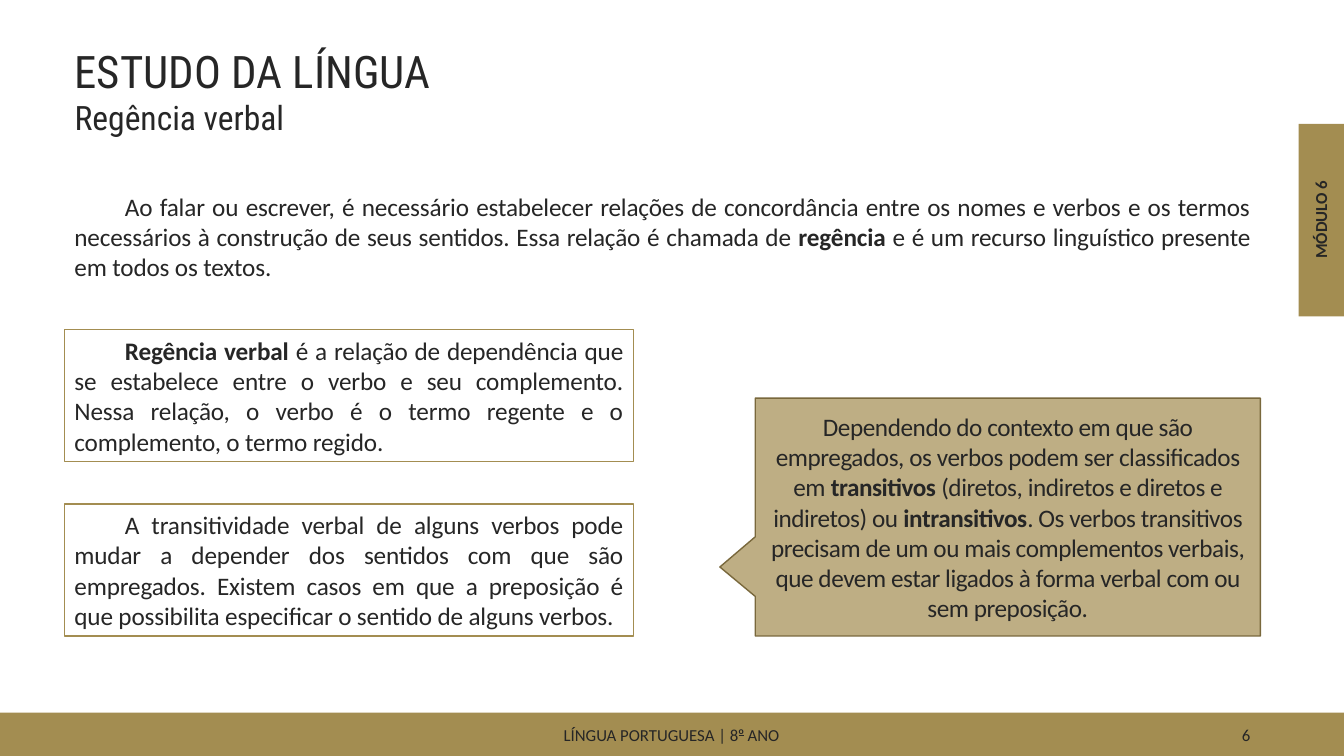
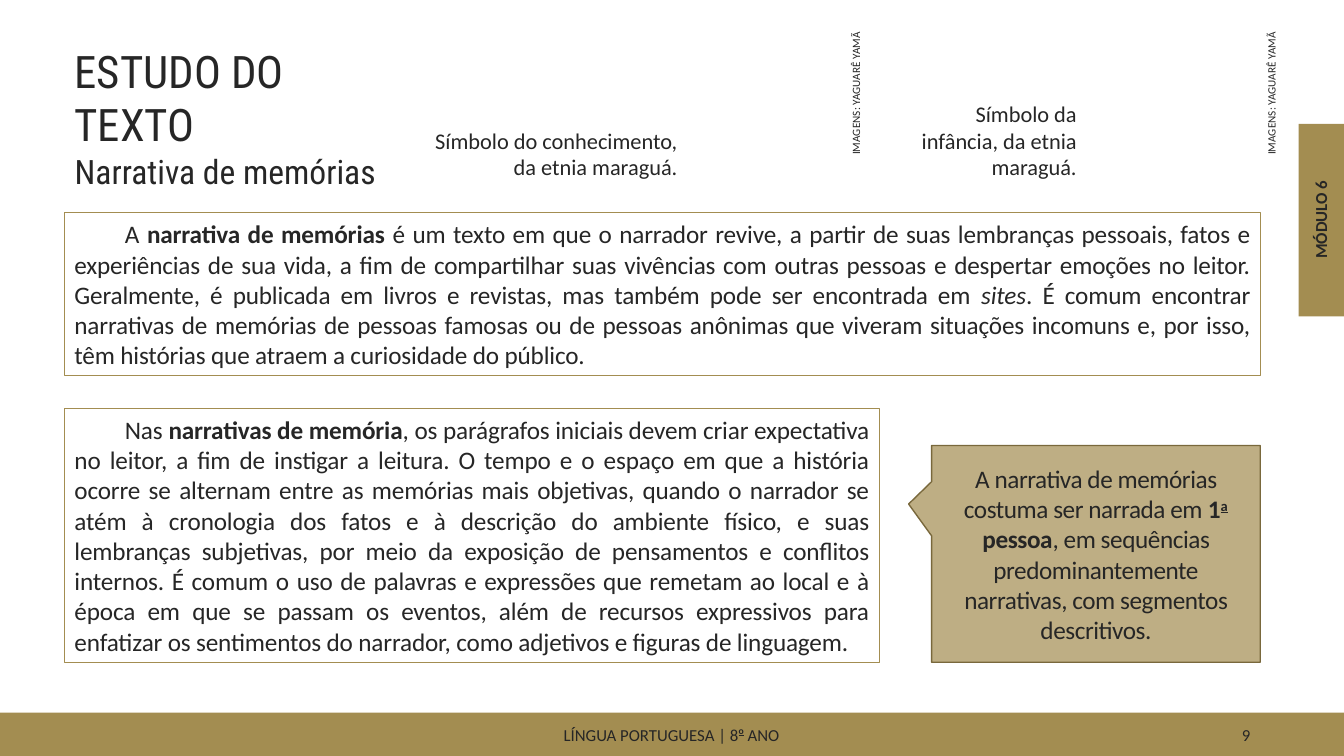
from pptx import Presentation
from pptx.dml.color import RGBColor
from pptx.enum.shapes import MSO_SHAPE
from pptx.enum.text import MSO_ANCHOR, MSO_AUTO_SIZE, PP_ALIGN
from pptx.oxml.ns import qn
from pptx.util import Pt
from lxml.etree import SubElement

PX = 9144
PAGE = (0, 0, 1333, 750)
COLORS = {"gold": "A38D51", "outline": "79683C", "ink": "262626"}
BODY_FONT, TITLE_FONT = "Calibri", "Roboto Condensed"
INSETS = (10, 5, 10, 5)
CAPTION_INSETS = (0, 4, 0, 4)
NO_INSETS = (0, 0, 0, 0)
CREDIT = "IMAGENS: YAGUARÊ YAMÃ"


def emu(box):
    """Turn px lengths into EMU."""
    return [length * PX for length in box]


def color(name):
    """Look up a palette colour."""
    return RGBColor.from_string(COLORS[name])


def format_run(run, size, marks="", baseline=0, spacing=0, font=BODY_FONT):
    """Give a run its font, marks (b, i, u), baseline and spacing."""
    run.font.name = font
    run.font.size = Pt(size)
    run.font.color.rgb = color("ink")
    run.font.bold = "b" in marks
    run.font.italic = "i" in marks
    run.font.underline = "u" in marks
    properties = run.font._element
    if baseline:
        properties.set("baseline", str(baseline * 1000))
    if spacing:
        properties.set("spc", str(spacing))


def write(shape, paragraphs, size, align, anchor=MSO_ANCHOR.MIDDLE,
          insets=INSETS, indent=0, spacing=0, after=0):
    """Fill a shape with paragraphs of (text, marks, baseline) runs."""
    frame = shape.text_frame
    frame.word_wrap = True
    frame.auto_size = MSO_AUTO_SIZE.NONE
    frame.vertical_anchor = anchor
    (frame.margin_left, frame.margin_top,
     frame.margin_right, frame.margin_bottom) = emu(insets)
    for index, pieces in enumerate(paragraphs):
        paragraph = frame.add_paragraph() if index else frame.paragraphs[0]
        paragraph.alignment = align
        paragraph.space_after = Pt(after)
        if indent:
            properties = paragraph._p.get_or_add_pPr()
            properties.set("marL", "0")
            properties.set("indent", str(indent * PX))
        for text, *style in pieces:
            run = paragraph.add_run()
            run.text = text
            format_run(run, size, *style, spacing=spacing)


def add_panel(shapes, box, kind=MSO_SHAPE.RECTANGLE, fill=None, line=None, width=0.75):
    """Add a flat shape with optional fill and outline."""
    panel = shapes.add_shape(kind, *emu(box))
    panel.shadow.inherit = False
    if fill:
        panel.fill.solid()
        panel.fill.fore_color.rgb = color(fill)
    else:
        panel.fill.background()
    if line:
        panel.line.color.rgb = color(line)
        panel.line.width = Pt(width)
    else:
        panel.line.fill.background()
    return panel


def add_label(shapes, box, paragraphs, size, align, rotation=0, **layout):
    """Add a text box."""
    label = shapes.add_textbox(*emu(box))
    label.rotation = rotation
    write(label, paragraphs, size, align, **layout)


def add_vertical_label(shapes, box, paragraphs, size, align, **layout):
    """Add text read upwards that fills a tall box."""
    left, top, width, height = box
    turned = (left + (width - height) // 2, top + (height - width) // 2, height, width)
    add_label(shapes, turned, paragraphs, size, align, rotation=270, **layout)


def add_footer(slide, box, number):
    """Draw the bottom band with course name and page number."""
    left, top, width, height = box
    add_panel(slide.shapes, box, fill="gold")
    course = [[("LÍNGUA PORTUGUESA | 8",), ("o", "bu", 45), (" ANO",)]]
    text_top, text_height = top + 3, height - 5
    add_label(slide.shapes, (left + (width - 450) // 2, text_top, 450, text_height),
              course, 12, PP_ALIGN.CENTER, after=6)
    add_label(slide.shapes, (left + width - 391, text_top, 308, text_height),
              [[(str(number),)]], 12, PP_ALIGN.RIGHT, after=6)


def add_module_tab(slide, box):
    """Draw the side tab with the module name."""
    left, top, width, height = box
    tab = slide.shapes.add_group_shape()
    add_panel(tab.shapes, box, fill="gold")
    add_vertical_label(tab.shapes, (left + (width - 30) // 2, top, 30, height),
                       [[("MÓDULO 6", "b")]], 12, PP_ALIGN.CENTER)


def add_heading(slide, box, section, topic):
    """Place the section and topic in the title placeholder."""
    title = slide.shapes.title
    title.left, title.top, title.width, title.height = emu(box)
    frame = title.text_frame
    frame.text = f"{section}\n{topic}"
    frame.word_wrap = True
    frame.auto_size = MSO_AUTO_SIZE.NONE
    frame.vertical_anchor = MSO_ANCHOR.TOP
    for paragraph, size in zip(frame.paragraphs, (32, 24)):
        paragraph.alignment = PP_ALIGN.LEFT
        format_run(paragraph.runs[0], size, font=TITLE_FONT)


def add_prose(slide, box, pieces, framed=True):
    """Add a justified paragraph, framed in gold or plain."""
    panel = add_panel(slide.shapes, box, line="gold" if framed else None)
    write(panel, [pieces], 18, PP_ALIGN.JUSTIFY, indent=50, spacing=-10)


def add_callout(slide, box, pointer, paragraphs):
    """Add a translucent callout whose pointer is relative to its box."""
    callout = add_panel(slide.shapes, box, MSO_SHAPE.RECTANGULAR_CALLOUT,
                        fill="gold", line="outline", width=1)
    callout.adjustments[0], callout.adjustments[1] = pointer
    tint = callout._element.spPr.find(qn("a:solidFill")).find(qn("a:srgbClr"))
    SubElement(tint, qn("a:alpha")).set("val", "70000")
    write(callout, paragraphs, 18, PP_ALIGN.CENTER, spacing=-30)


def add_symbol_caption(slide, box, caption, credit_left):
    """Add a symbol caption and its upright image credit."""
    add_label(slide.shapes, box, [[(caption,)]], 16, PP_ALIGN.RIGHT,
              anchor=MSO_ANCHOR.BOTTOM, insets=CAPTION_INSETS)
    add_vertical_label(slide.shapes, (credit_left, box[1] - 89, 13, 147),
                       [[(CREDIT,)]], 8, PP_ALIGN.RIGHT,
                       anchor=MSO_ANCHOR.TOP, insets=NO_INSETS)


def add_module_slide(deck, number, heading_box, section, topic):
    """Start a slide with the shared band, tab and heading."""
    slide = deck.slides.add_slide(deck.slide_layouts[5])
    add_footer(slide, (0, 707, PAGE[2], 43), number)
    add_module_tab(slide, (1288, 123, 45, 191))
    add_heading(slide, heading_box, section, topic)
    return slide


def build_verb_slide(deck):
    """Build the slide on verbal government."""
    slide = add_module_slide(deck, 6, (64, 38, 711, 104),
                             "ESTUDO DA LÍNGUA", "Regência verbal")
    add_prose(slide, (64, 184, 1186, 101), [
        ("Ao falar ou escrever, é necessário estabelecer relações de concordância entre "
         "os nomes e verbos e os termos necessários à construção de seus sentidos. "
         "Essa relação é chamada de ",),
        ("regência", "b"),
        (" e é um recurso linguístico presente em todos os textos.",),
    ], framed=False)
    definition = [
        ("Regência verbal ", "b"),
        ("é a relação de dependência que se estabelece entre o verbo e seu complemento. "
         "Nessa relação, o verbo é o termo regente e o complemento, o termo regido.",),
    ]
    transitivity = [
        ("A transitividade verbal de alguns verbos pode mudar a depender dos sentidos "
         "com que são empregados. Existem casos em que a preposição é que possibilita "
         "especificar o sentido de alguns verbos.",),
    ]
    for row, pieces in enumerate((definition, transitivity)):
        add_prose(slide, (64, 327 + row * 173, 564, 131), pieces)
    add_callout(slide, (749, 395, 501, 236), (-0.57, 0.21), [[
        ("Dependendo do contexto em que são empregados, os verbos podem ser "
         "classificados em ",),
        ("transitivos", "b"),
        (" (diretos, indiretos e diretos e indiretos) ou ",),
        ("intransitivos", "b"),
        (". Os verbos transitivos precisam de um ou mais complementos verbais, que devem "
         "estar ligados à forma verbal com ou sem preposição.",),
    ]])


def build_memoir_slide(deck):
    """Build the slide on memoir narratives."""
    slide = add_module_slide(deck, 9, (64, 38, 331, 145),
                             "ESTUDO DO TEXTO", "Narrativa de memórias")
    add_prose(slide, (64, 211, 1186, 162), [
        ("A ",),
        ("narrativa de memórias ", "b"),
        ("é um texto em que o narrador revive, a partir de suas lembranças pessoais, "
         "fatos e experiências de sua vida, a fim de compartilhar suas vivências com "
         "outras pessoas e despertar emoções no leitor. Geralmente, é publicada em livros "
         "e revistas, mas também pode ser encontrada em ",),
        ("sites", "i"),
        (". É comum encontrar narrativas de memórias de pessoas famosas ou de pessoas "
         "anônimas que viveram situações incomuns e, por isso, têm histórias que atraem "
         "a curiosidade do público.",),
    ])
    add_prose(slide, (64, 405, 808, 252), [
        ("Nas ",),
        ("narrativas de memória", "b"),
        (", os parágrafos iniciais devem criar expectativa no leitor, a fim de instigar a "
         "leitura. O tempo e o espaço em que a história ocorre se alternam entre as "
         "memórias mais objetivas, quando o narrador se atém à cronologia dos fatos e à "
         "descrição do ambiente físico, e suas lembranças subjetivas, por meio da "
         "exposição de pensamentos e conflitos internos. É comum o uso de palavras e "
         "expressões que remetam ao local e à época em que se passam os eventos, além de "
         "recursos expressivos para enfatizar os sentimentos do narrador, como adjetivos "
         "e figuras de linguagem.",),
    ])
    add_callout(slide, (924, 442, 326, 215), (-0.57, -0.23), [
        [("A narrativa de memórias costuma ser narrada em ",), ("1", "b"), ("a", "bu", 30),
         (" pessoa", "b"), (", em sequências predominantemente",)],
        [("narrativas, com segmentos descritivos.",)],
    ])
    add_symbol_caption(slide, (425, 121, 247, 62),
                       "Símbolo do conhecimento, da etnia maraguá.", 842)
    add_symbol_caption(slide, (891, 121, 177, 62),
                       "Símbolo da infância, da etnia maraguá.", 1254)


def main():
    """Build and save the deck."""
    deck = Presentation()
    deck.slide_width, deck.slide_height = emu(PAGE[2:])
    build_verb_slide(deck)
    build_memoir_slide(deck)
    deck.save("out.pptx")


if __name__ == "__main__":
    main()
